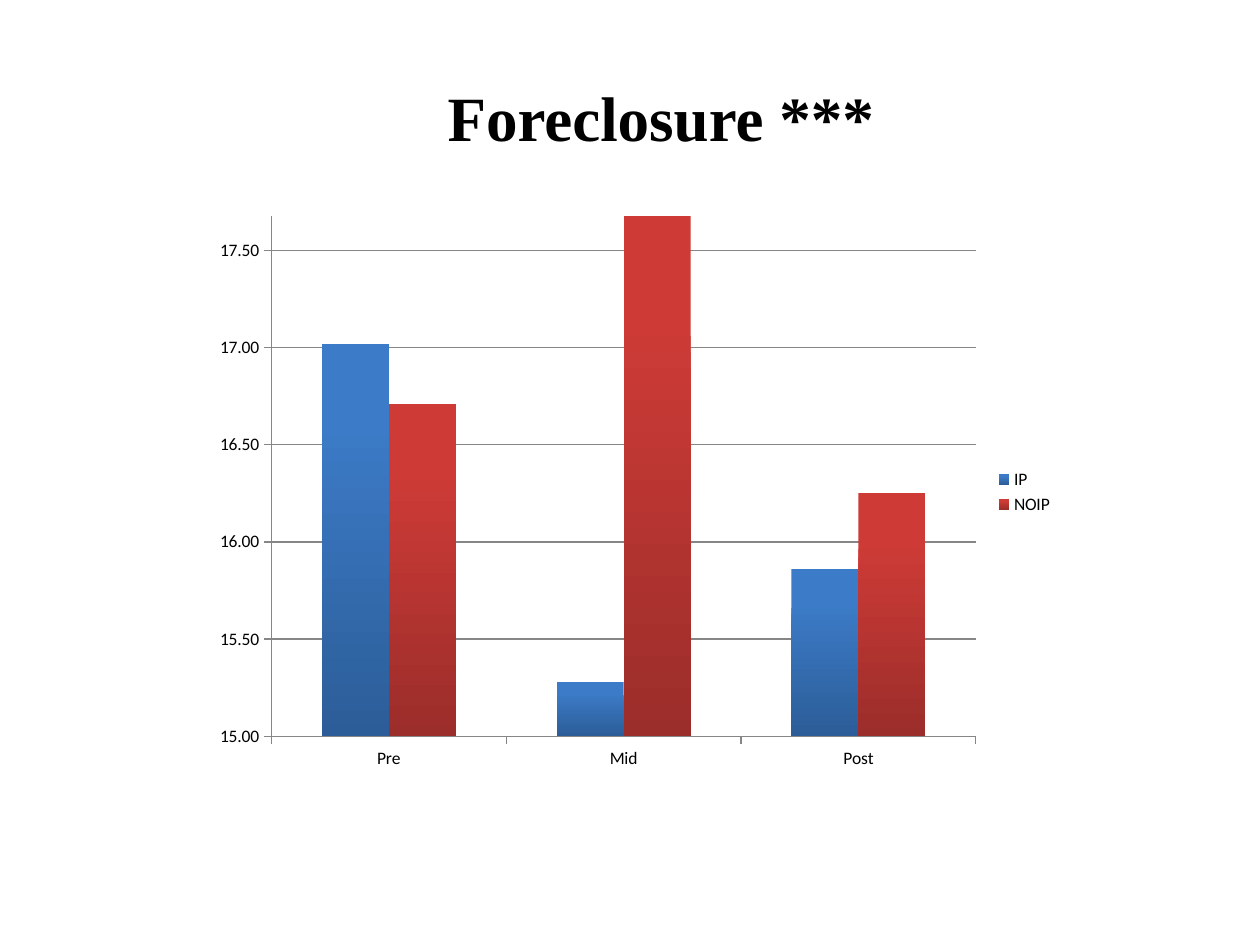
from pptx import Presentation
from pptx.chart.data import CategoryChartData
from pptx.dml.color import RGBColor
from pptx.enum.chart import XL_CHART_TYPE, XL_LEGEND_POSITION, XL_TICK_MARK
from pptx.enum.text import MSO_ANCHOR, PP_ALIGN
from pptx.util import Inches, Pt

BLACK = RGBColor(0x00, 0x00, 0x00)
GRAY = RGBColor(0x86, 0x86, 0x86)
BLUE_LIGHT = RGBColor(0x3C, 0x7B, 0xC7)
BLUE_DARK = RGBColor(0x2C, 0x5D, 0x98)
RED_LIGHT = RGBColor(0xCE, 0x3B, 0x37)
RED_DARK = RGBColor(0x9B, 0x2D, 0x2A)

TITLE = "Foreclosure ***"
CATEGORIES = ["Pre", "Mid", "Post"]
SERIES = [
    ("IP", (17.02, 15.28, 15.86), (BLUE_LIGHT, BLUE_DARK)),
    ("NOIP", (16.71, 17.68, 16.25), (RED_LIGHT, RED_DARK)),
]
NUMBER_FORMAT = "###0.00"


def add_title(slide):
    title = slide.shapes.title
    title.left, title.top = Inches(0.83), Inches(0.3)
    title.width, title.height = Inches(8.83), Inches(1.25)
    title.text_frame.text = TITLE
    title.text_frame.vertical_anchor = MSO_ANCHOR.MIDDLE
    paragraph = title.text_frame.paragraphs[0]
    paragraph.alignment = PP_ALIGN.CENTER
    font = paragraph.runs[0].font
    font.name, font.size, font.bold = "Times New Roman", Pt(36), True
    font.color.rgb = BLACK


def add_foreclosure_chart(slide):
    data = CategoryChartData(number_format=NUMBER_FORMAT)
    data.categories = CATEGORIES
    for name, values, _ in SERIES:
        data.add_series(name, values)
    chart = slide.shapes.add_chart(
        XL_CHART_TYPE.COLUMN_CLUSTERED,
        Inches(1.61), Inches(1.62), Inches(6.85), Inches(4.57), data,
    ).chart
    chart.has_title = False
    chart.font.name, chart.font.size = "Calibri", Pt(10)
    chart.font.color.rgb = BLACK
    chart.has_legend = True
    chart.legend.position = XL_LEGEND_POSITION.RIGHT
    chart.legend.include_in_layout = False

    value_axis = chart.value_axis
    value_axis.minimum_scale, value_axis.maximum_scale = 15, 17.68
    value_axis.major_unit = 0.5
    value_axis.has_major_gridlines = True
    value_axis.tick_labels.number_format = NUMBER_FORMAT
    value_axis.tick_labels.number_format_is_linked = False
    for axis in (chart.category_axis, value_axis):
        axis.major_tick_mark = XL_TICK_MARK.OUTSIDE
        axis.minor_tick_mark = XL_TICK_MARK.NONE
    for line in (chart.category_axis.format.line, value_axis.format.line,
                 value_axis.major_gridlines.format.line):
        line.color.rgb = GRAY
        line.width = Pt(0.75)

    plot = chart.plots[0]
    plot.gap_width, plot.overlap = 150, 0
    plot.vary_by_categories = False
    for series, (_, _, colors) in zip(plot.series, SERIES):
        series.invert_if_negative = False
        fill = series.format.fill
        fill.gradient()
        fill.gradient_angle = 270
        for stop, color, position in zip(fill.gradient_stops, colors, (0.2, 1)):
            stop.color.rgb = color
            stop.position = position


def main():
    presentation = Presentation()
    presentation.slide_width, presentation.slide_height = Inches(10), Inches(7.5)
    slide = presentation.slides.add_slide(presentation.slide_layouts[5])
    add_title(slide)
    add_foreclosure_chart(slide)
    presentation.save("out.pptx")


if __name__ == "__main__":
    main()
